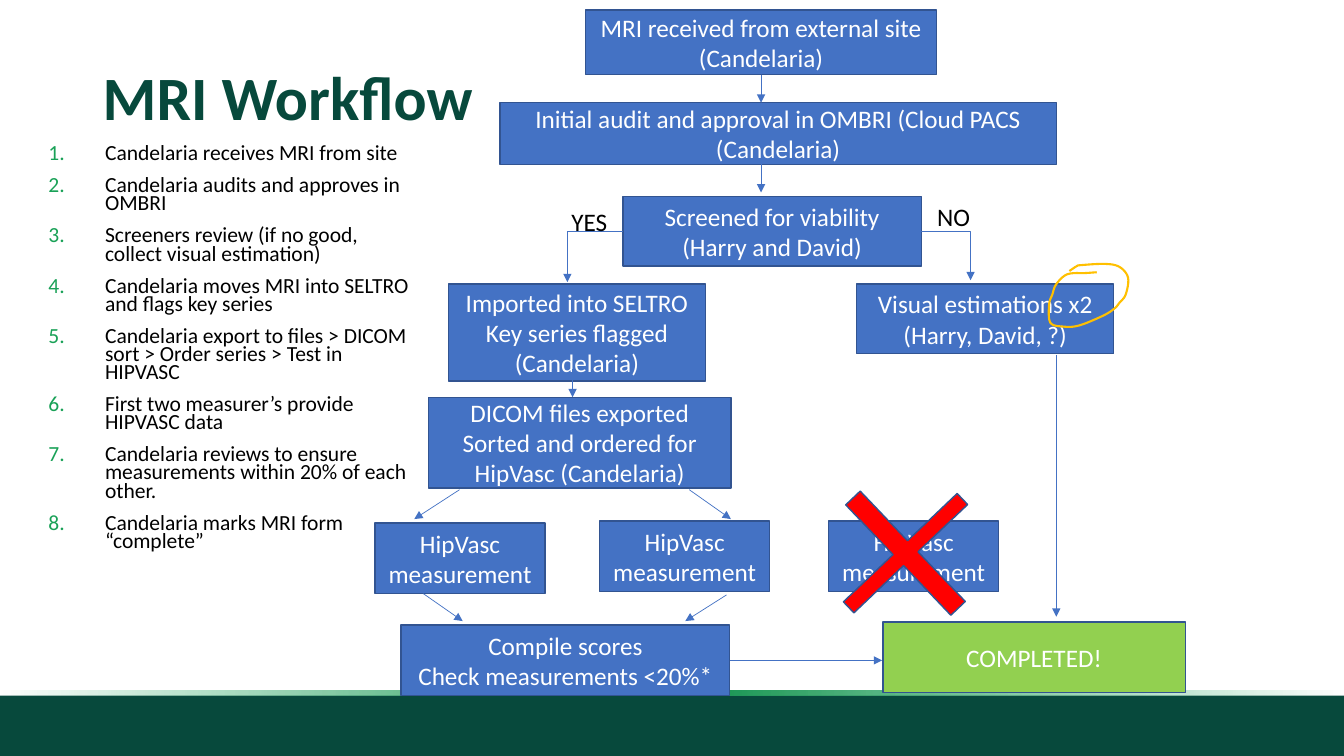
from lxml import etree
from pptx import Presentation
from pptx.dml.color import RGBColor
from pptx.enum.shapes import MSO_CONNECTOR as CONNECTOR, MSO_SHAPE as SHAPE
from pptx.enum.text import MSO_ANCHOR as ANCHOR, PP_ALIGN as ALIGN
from pptx.oxml import parse_xml
from pptx.oxml.ns import nsdecls, qn
from pptx.util import Cm, Pt

FONT = "Calibri"
COLORS = {
    "dark": "07493C", "fade": "0D9D4F", "green": "0C9049", "number": "19A157",
    "blue": "4472C4", "outline": "325491", "lime": "92D050", "red": "FF0000",
    "amber": "FFC000", "black": "000000", "white": "FFFFFF",
}

STEPS = [
    "Candelaria receives MRI from site",
    "Candelaria audits and approves in OMBRI",
    "Screeners review (if no good, collect visual estimation)",
    "Candelaria moves MRI into SELTRO and flags key series",
    "Candelaria export to files > DICOM sort > Order series > Test in HIPVASC",
    "First two measurer’s provide HIPVASC data",
    "Candelaria reviews to ensure measurements within 20% of each other.",
    "Candelaria marks MRI form “complete”",
]

MEASURE = ["HipVasc", "measurement"]

# name: (left, top, width, height), lines
BOXES = {
    "received": ((14.76, 0.25, 8.84, 1.63),
                 ["MRI received from external site", "(Candelaria)"]),
    "audit": ((12.6, 2.59, 14.02, 1.55),
              ["Initial audit and approval in OMBRI (Cloud PACS", "(Candelaria)"]),
    "screened": ((15.7, 4.95, 7.52, 1.75),
                 ["Screened for viability", "(Harry and David)"]),
    "imported": ((11.3, 7.16, 6.48, 2.44),
                 ["Imported into SELTRO", "Key series flagged", "(Candelaria)"]),
    "exported": ((10.8, 10.01, 7.62, 2.29),
                 ["DICOM files exported", "Sorted and ordered for HipVasc (Candelaria)"]),
    "visual": ((21.59, 7.16, 6.48, 1.75),
               ["Visual estimations x2", "(Harry, David, ?)"]),
    "first": ((9.45, 13.18, 4.29, 1.78), MEASURE),
    "second": ((15.11, 13.13, 4.29, 1.78), MEASURE),
    "third": ((20.88, 13.13, 4.29, 1.78), MEASURE),
    "compiled": ((10.11, 15.75, 8.28, 1.78),
                 ["Compile scores", "Check measurements <20%*"]),
    "completed": ((22.25, 15.67, 7.62, 1.78), ["COMPLETED!"]),
}

# start, end, box whose side the arrow leaves from, side number
ARROWS = [
    ((19.18, 1.88), (19.18, 2.59), "received", 2),
    ((19.18, 4.14), (19.18, 4.85), None, None),
    ((14.43, 9.3), (14.43, 10.01), None, None),
    ((11.58, 12.34), (10.44, 13.08), None, None),
    ((17.37, 12.34), (18.42, 13.08), None, None),
    ((10.67, 14.96), (11.66, 15.65), None, None),
    ((18.31, 14.99), (17.27, 15.65), None, None),
    ((26.62, 8.94), (26.62, 15.54), None, None),
    ((18.39, 16.64), (22.23, 16.64), "compiled", 3),
]
BRANCHES = [((15.7, 5.82), (14.3, 7.11)), ((23.22, 5.82), (24.46, 7.06))]

LOOP = [
    (27.64, 6.86), (27.36, 6.88), (26.9, 6.91), (26.62, 7.16), (26.52, 7.42),
    (26.44, 7.67), (26.47, 8.13), (26.8, 8.23), (27.2, 8.2), (27.81, 7.95),
    (28.09, 7.77), (28.22, 7.62), (28.37, 7.42), (28.43, 7.0), (28.22, 6.73),
    (27.86, 6.65), (27.25, 6.68), (27.13, 6.71), (26.95, 6.83),
]


def rgb(name):
    return RGBColor.from_string(COLORS[name])


def place(bounds):
    return [Cm(value) for value in bounds]


def write_text(shape, lines, size=18, color="white", bold=False, align=ALIGN.LEFT,
               anchor=ANCHOR.TOP, spacing=None, before=0, numbered=False):
    frame = shape.text_frame
    frame.word_wrap = True
    frame.vertical_anchor = anchor
    for index, line in enumerate(lines):
        paragraph = frame.add_paragraph() if index else frame.paragraphs[0]
        if numbered:
            add_number(paragraph)
        paragraph.alignment = align
        if spacing:
            paragraph.line_spacing = spacing
        if index and before:
            paragraph.space_before = Pt(before)
        run = paragraph.add_run()
        run.text = line
        run.font.name = FONT
        run.font.size = Pt(size)
        run.font.bold = bold
        run.font.color.rgb = rgb(color)


def add_number(paragraph):
    properties = paragraph._p.get_or_add_pPr()
    properties.set("marL", str(Cm(1.43)))
    properties.set("indent", str(-Cm(1.43)))
    color = etree.SubElement(properties, qn("a:buClr"))
    etree.SubElement(color, qn("a:srgbClr")).set("val", COLORS["number"])
    etree.SubElement(properties, qn("a:buFont")).set("typeface", FONT)
    etree.SubElement(properties, qn("a:buAutoNum")).set("type", "arabicPeriod")


def add_text(slide, bounds, lines, **style):
    write_text(slide.shapes.add_textbox(*place(bounds)), lines, **style)


def add_block(slide, bounds, fill, outline=None, kind=SHAPE.RECTANGLE):
    shape = slide.shapes.add_shape(kind, *place(bounds))
    shape.shadow.inherit = False
    shape.fill.solid()
    shape.fill.fore_color.rgb = rgb(fill)
    if outline:
        shape.line.color.rgb = rgb(outline)
        shape.line.width = Pt(1)
    else:
        shape.line.fill.background()
    return shape


def fade_ends(shape):
    stops = "".join(
        f'<a:gs pos="{position}"><a:srgbClr val="{COLORS[color]}">'
        f'<a:alpha val="{alpha}"/></a:srgbClr></a:gs>'
        for position, color, alpha in
        [(0, "fade", 0), (50000, "green", 100000), (100000, "fade", 0)])
    gradient = parse_xml(f'<a:gradFill {nsdecls("a")}><a:gsLst>{stops}</a:gsLst>'
                         '<a:lin ang="10800000" scaled="0"/></a:gradFill>')
    properties = shape._element.spPr
    properties.replace(properties.find(qn("a:solidFill")), gradient)


def add_arrow(slide, start, end, source=None, side=None, bent=False):
    kind = CONNECTOR.ELBOW if bent else CONNECTOR.STRAIGHT
    arrow = slide.shapes.add_connector(kind, *place(start + end))
    if source:
        arrow.begin_connect(source, side)
    arrow.line.color.rgb = rgb("blue")
    arrow.line.width = Pt(0.5)
    properties = arrow._element.spPr
    if bent:
        properties.find(qn("a:prstGeom")).set("prst", "bentConnector2")
    etree.SubElement(properties.find(qn("a:ln")), qn("a:tailEnd")).set("type", "triangle")
    etree.SubElement(properties, qn("a:effectLst"))


def smooth(points, parts=6):
    """Points along a Catmull-Rom curve through the given points."""
    padded = [points[0], *points, points[-1]]
    curve = [points[0]]
    for a, b, c, d in zip(padded, padded[1:], padded[2:], padded[3:]):
        for t in (part / parts for part in range(1, parts + 1)):
            curve.append(tuple(
                (2 * q + (r - p) * t + (2 * p - 5 * q + 4 * r - s) * t ** 2
                 + (3 * q - p - 3 * r + s) * t ** 3) / 2
                for p, q, r, s in zip(a, b, c, d)))
    return curve


def add_loop(slide, points):
    start, *rest = [place(point) for point in smooth(points)]
    builder = slide.shapes.build_freeform(*start)
    builder.add_line_segments(rest, close=False)
    loop = builder.convert_to_shape()
    loop.shadow.inherit = False
    loop.fill.background()
    loop.line.color.rgb = rgb("amber")
    loop.line.width = Pt(1.5)


def main():
    presentation = Presentation()
    presentation.slide_width, presentation.slide_height = Cm(33.87), Cm(19.05)
    slide = presentation.slides.add_slide(presentation.slide_layouts[6])

    # Footer band
    add_block(slide, (0, 17.53, 33.87, 1.52), "dark")
    fade_ends(add_block(slide, (0, 17.4, 33.87, 0.13), "green"))

    # Title and numbered steps
    add_text(slide, (2.34, 1.02, 29.21, 3.02), ["MRI Workflow"], size=44, color="dark",
             bold=True, anchor=ANCHOR.MIDDLE, spacing=0.9)
    add_text(slide, (0.97, 3.56, 9.58, 10.69), STEPS, size=15.4, color="black",
             spacing=0.7, before=10, numbered=True)

    # Flowchart boxes
    boxes = {}
    for name, (bounds, lines) in BOXES.items():
        fill = "lime" if name == "completed" else "blue"
        boxes[name] = add_block(slide, bounds, fill, "outline")
        write_text(boxes[name], lines, align=ALIGN.CENTER, anchor=ANCHOR.MIDDLE)

    # Arrows and branch labels
    for start, end, source, side in ARROWS:
        add_arrow(slide, start, end, boxes.get(source), side)
    for start, end in BRANCHES:
        add_arrow(slide, start, end, bent=True)
    add_text(slide, (23.37, 4.95, 1.45, 1.02), ["NO"], color="black")
    add_text(slide, (14.15, 5.08, 1.45, 1.02), ["YES"], color="black")

    # Cross over the third measurement, loop around the count
    cross = add_block(slide, (20.9, 11.96, 3.84, 3.96), "red", "outline", SHAPE.CROSS)
    cross.adjustments[0] = 0.45
    cross.rotation = 46.4
    add_loop(slide, LOOP)

    presentation.save("out.pptx")


if __name__ == "__main__":
    main()
